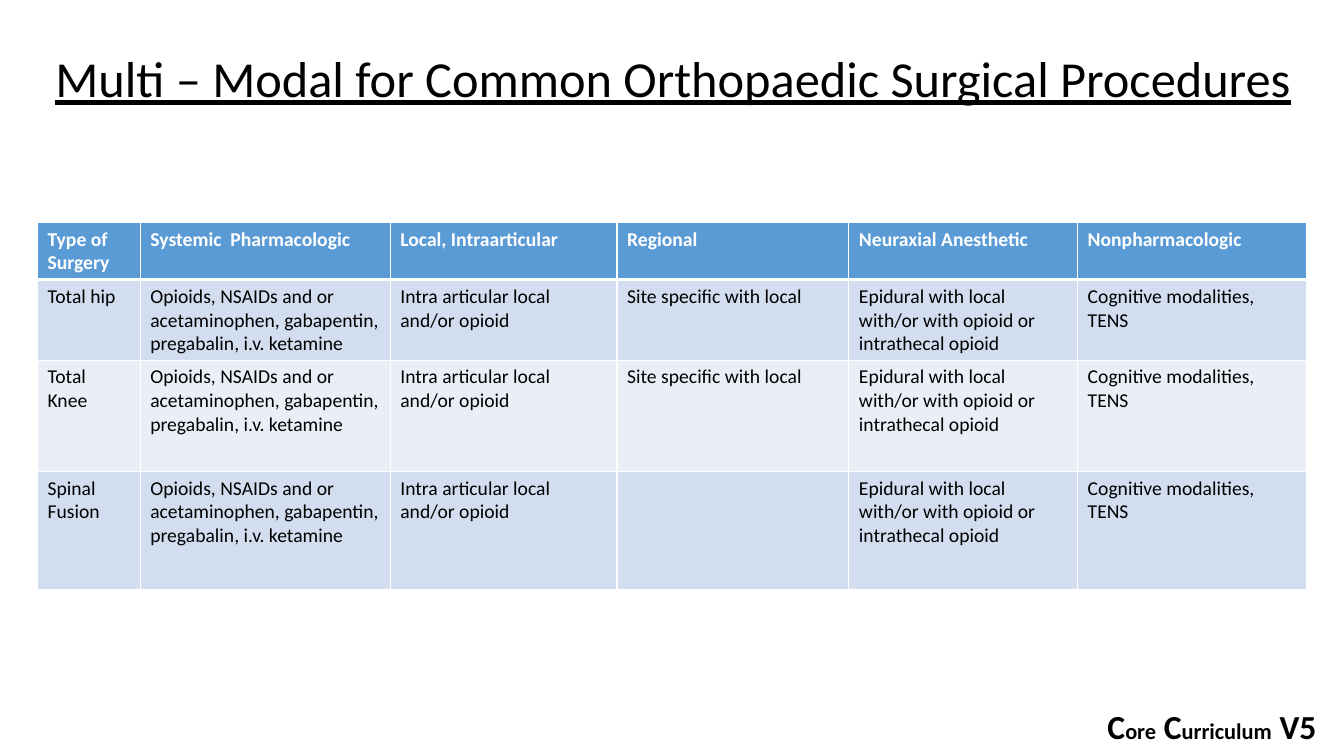
"""Build a slide with a table of multimodal analgesia by type of surgery."""
from dataclasses import dataclass

from lxml.etree import SubElement
from pptx import Presentation
from pptx.dml.color import RGBColor
from pptx.oxml.ns import qn
from pptx.util import Pt


@dataclass(frozen=True)
class Theme:
    font: str = "Calibri"
    black: str = "000000"
    white: str = "FFFFFF"
    header: str = "5B9BD5"
    bands: tuple = ("D2DEEF", "EAEFF7")
    title: int = 36
    footer: int = 24
    footer_small: int = 16
    cell: int = 14
    rule: int = 1
    header_rule: int = 3


THEME = Theme()
HEADERS = ["Type of Surgery", "Systemic  Pharmacologic", "Local, Intraarticular",
           "Regional", "Neuraxial Anesthetic", "Nonpharmacologic"]
SYSTEMIC = "Opioids, NSAIDs and or acetaminophen, gabapentin, pregabalin, i.v. ketamine"
LOCAL = "Intra articular local and/or opioid"
REGIONAL = "Site specific with local"
NEURAXIAL = "Epidural with local with/or with opioid or intrathecal opioid"
NONPHARMA = "Cognitive modalities, TENS"
SURGERIES = [("Total hip", REGIONAL), ("Total Knee", REGIONAL), ("Spinal Fusion", "")]
COL_WIDTHS = [73.4, 178.6, 162, 165.6, 163.4, 163.4]
ROW_HEIGHTS = [40, 57.6, 79.4, 84.4]


def add_run(p, text, size, color=THEME.black, bold=False, underline=False):
    r = p.add_run()
    r.text = text
    r.font.name = THEME.font
    r.font.size = Pt(size)
    r.font.bold = bold
    r.font.underline = underline
    r.font.color.rgb = RGBColor.from_string(color)


def add_text_box(s, left, top, width, height):
    tf = s.shapes.add_textbox(Pt(left), Pt(top), Pt(width), Pt(height)).text_frame
    tf.word_wrap = True
    return tf.paragraphs[0]


def set_borders(cell, top, bottom):
    tc_pr = cell._tc.get_or_add_tcPr()
    widths = {"lnL": THEME.rule, "lnR": THEME.rule, "lnT": top, "lnB": bottom}
    for tag, width in widths.items():
        ln = SubElement(tc_pr, qn(f"a:{tag}"), w=str(Pt(width)))
        fill = SubElement(ln, qn("a:solidFill"))
        SubElement(fill, qn("a:srgbClr"), val=THEME.white)


def fill_cell(cell, text, row):
    is_header = row == 0
    set_borders(cell,
                top=THEME.header_rule if row == 1 else THEME.rule,
                bottom=THEME.header_rule if is_header else THEME.rule)
    cell.fill.solid()
    color = THEME.header if is_header else THEME.bands[(row - 1) % 2]
    cell.fill.fore_color.rgb = RGBColor.from_string(color)
    if text:
        add_run(cell.text_frame.paragraphs[0], text, THEME.cell, bold=is_header,
                color=THEME.white if is_header else THEME.black)


def add_grid(s, left, top, rows):
    table = s.shapes.add_table(len(rows), len(COL_WIDTHS), Pt(left), Pt(top),
                               Pt(sum(COL_WIDTHS)), Pt(sum(ROW_HEIGHTS))).table
    table.horz_banding = False
    for column, width in zip(table.columns, COL_WIDTHS):
        column.width = Pt(width)
    for i, (texts, height) in enumerate(zip(rows, ROW_HEIGHTS)):
        table.rows[i].height = Pt(height)
        for j, text in enumerate(texts):
            fill_cell(table.cell(i, j), text, i)


def main():
    prs = Presentation()
    prs.slide_width, prs.slide_height = Pt(960), Pt(540)
    s = prs.slides.add_slide(prs.slide_layouts[6])

    p = add_text_box(s, 784, 501, 169, 36)
    for i, text in enumerate(["C", "ore", " C", "urriculum", " V5"]):
        add_run(p, text, THEME.footer_small if i % 2 else THEME.footer, bold=True)

    p = add_text_box(s, 32.4, 30.2, 943, 51)
    add_run(p, "Multi – Modal for Common Orthopaedic Surgical Procedures",
            THEME.title, underline=True)

    body = [[surgery, SYSTEMIC, LOCAL, regional, NEURAXIAL, NONPHARMA]
            for surgery, regional in SURGERIES]
    add_grid(s, 26.8, 158.8, [HEADERS] + body)
    prs.save("out.pptx")


if __name__ == "__main__":
    main()
